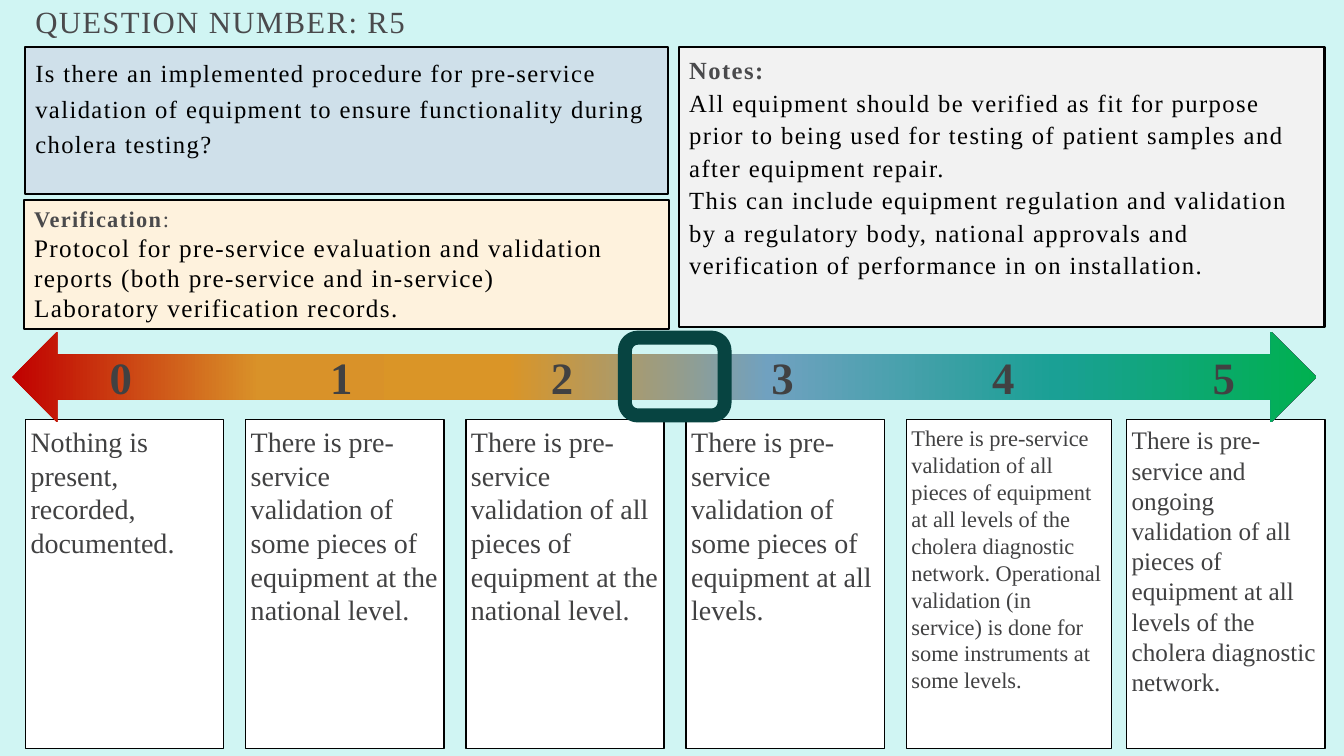
from lxml.etree import SubElement
from pptx import Presentation
from pptx.dml.color import RGBColor
from pptx.enum.shapes import MSO_SHAPE as Shape
from pptx.enum.text import MSO_ANCHOR as Anchor, PP_ALIGN as Align
from pptx.oxml.ns import qn
from pptx.util import Cm, Pt

FONT = "Times New Roman"
BLACK, HEADING, BODY = "000000", "4A4A4C", "414142"

TITLE = ("QUESTION NUMBER: R5", 22, HEADING, False)
PANELS = [
    ((0.64, 1.19, 16.2, 3.71), "CFE0EA", 1.2, [
        ("Is there an implemented procedure for pre-service validation of equipment "
         "to ensure functionality during cholera testing?", 17.6, BLACK, False),
    ]),
    ((17.12, 1.19, 16.26, 7.06), "F2F2F2", 1.1, [
        ("Notes:", 17.6, HEADING, True),
        ("All equipment should be verified as fit for purpose prior to being used for "
         "testing of patient samples and after equipment repair.\n"
         "This can include equipment regulation and validation by a regulatory body, "
         "national approvals and verification of performance in on installation.",
         17.6, BLACK, False),
    ]),
    ((0.61, 5.05, 16.26, 3.25), "FEF2DD", 1.0, [
        ("Verification:", 16, HEADING, "Verification"),
        ("Protocol for pre-service evaluation and validation reports "
         "(both pre-service and in-service)", 18, BLACK, False),
        ("Laboratory verification records.", 18, BLACK, False),
    ]),
]
LEVELS = [
    ("Nothing is present, recorded, documented.", 20, 5),
    ("There is pre-service validation of some pieces of equipment at the national level.", 20, 5),
    ("There is pre-service validation of all pieces of equipment at the national level.", 20, 5),
    ("There is pre-service validation of some pieces of equipment at all levels.", 20, 5),
    ("There is pre-service validation of all pieces of equipment at all levels of the cholera "
     "diagnostic network. Operational validation (in service) is done for some instruments "
     "at some levels.", 16, 5.18),
    ("There is pre-service and ongoing validation of all pieces of equipment at all levels "
     "of the cholera diagnostic network.", 18, 5),
]
SCALE_STOPS = [(0, "C00000"), (19, "D99229"), (38, "DA9527"),
               (58, "70A1C0"), (80, "1AA095"), (100, "00B050")]
CARD_LEFT, CARD_TOP, CARD_HEIGHT, CARD_PITCH = 0.64, 10.57, 8.3, 5.55
NUMBER_LEFT, NUMBER_TOP, NUMBER_PITCH = 2.13, 9.12, 5.56


def colour(value):
    return RGBColor.from_string(value)


def add_box(slide, kind, place, fill=None, line=None, line_width=1):
    shape = slide.shapes.add_shape(kind, *map(Cm, place))
    shape.shadow.inherit = False
    if fill:
        shape.fill.solid()
        shape.fill.fore_color.rgb = colour(fill)
    else:
        shape.fill.background()
    if line:
        shape.line.color.rgb = colour(line)
        shape.line.width = Pt(line_width)
    else:
        shape.line.fill.background()
    return shape


def style_font(font, size, text_colour, bold, tracking):
    font.name, font.size, font.bold = FONT, Pt(size), bold
    font.color.rgb = colour(text_colour)
    if tracking:
        font._element.set("spc", str(tracking * 100))


def write(shape, paragraphs, spacing=1.0, tracking=0, align=Align.LEFT,
          anchor=Anchor.TOP, inset=None):
    frame = shape.text_frame
    frame.word_wrap = True
    frame.vertical_anchor = anchor
    if inset is not None:
        frame.margin_left = frame.margin_right = Cm(inset)
        frame.margin_top = frame.margin_bottom = Cm(inset)
    for index, (text, size, text_colour, bold) in enumerate(paragraphs):
        paragraph = frame.add_paragraph() if index else frame.paragraphs[0]
        paragraph.alignment = align
        paragraph.line_spacing = spacing
        style_font(paragraph.font, size, text_colour, bold is True, tracking)
        if isinstance(bold, str):
            label = paragraph.add_run()
            label.text = bold
            label.font.bold = True
            paragraph.add_run().text = text.removeprefix(bold)
        else:
            paragraph.text = text


def set_gradient(shape, stops):
    shape.fill.gradient()
    shape.fill.gradient_angle = 0
    stop_list = shape._element.spPr.find(qn("a:gradFill")).find(qn("a:gsLst"))
    for stop in list(stop_list):
        stop_list.remove(stop)
    for position, value in stops:
        stop = SubElement(stop_list, qn("a:gs"), pos=str(position * 1000))
        SubElement(stop, qn("a:srgbClr"), val=value)


def main():
    presentation = Presentation()
    presentation.slide_width, presentation.slide_height = Cm(33.87), Cm(19.05)
    slide = presentation.slides.add_slide(presentation.slide_layouts[6])
    slide.background.fill.solid()
    slide.background.fill.fore_color.rgb = colour("D0F5F3")

    title = slide.shapes.add_textbox(Cm(0.64), Cm(0.13), Cm(10.6), Cm(1.14))
    write(title, [TITLE], spacing=0.8, tracking=1)

    for index, (text, size, width) in enumerate(LEVELS):
        place = (CARD_LEFT + index * CARD_PITCH, CARD_TOP, width, CARD_HEIGHT)
        card = add_box(slide, Shape.RECTANGLE, place, "FFFFFF", BLACK)
        write(card, [(text, size, BODY, False)], inset=0.13)

    for place, fill, spacing, paragraphs in PANELS:
        panel = add_box(slide, Shape.RECTANGLE, place, fill, BLACK, 1.5)
        write(panel, paragraphs, spacing, tracking=1)

    scale = add_box(slide, Shape.LEFT_RIGHT_ARROW, (0.3, 8.36, 32.87, 2.28))
    set_gradient(scale, SCALE_STOPS)
    for level in range(len(LEVELS)):
        number = slide.shapes.add_textbox(
            Cm(NUMBER_LEFT + level * NUMBER_PITCH), Cm(NUMBER_TOP), Cm(1.83), Cm(0.74))
        write(number, [(str(level), 32, BODY, True)], align=Align.CENTER, anchor=Anchor.MIDDLE)

    add_box(slide, Shape.ROUNDED_RECTANGLE, (15.75, 8.51, 2.51, 1.96),
            line="074441", line_width=10)
    presentation.save("out.pptx")


if __name__ == "__main__":
    main()
